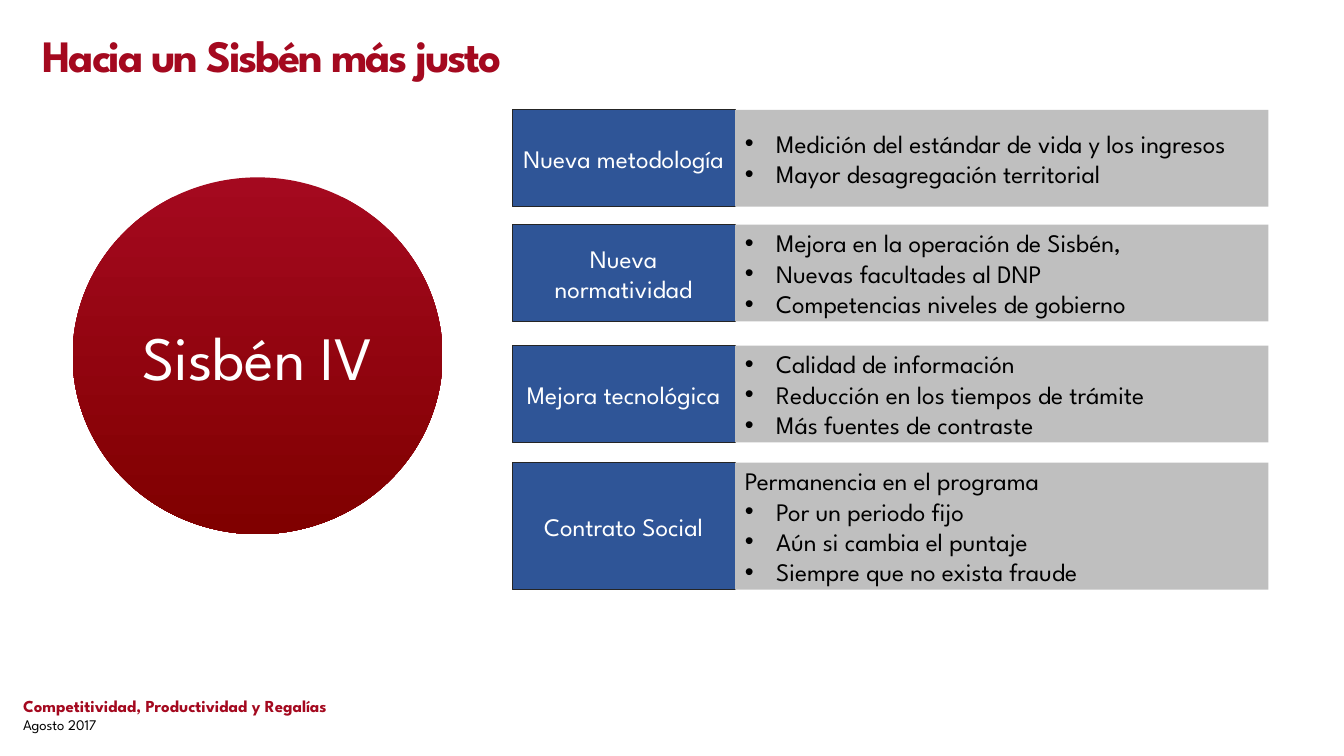
from lxml import etree
from pptx import Presentation
from pptx.dml.color import RGBColor
from pptx.enum.shapes import MSO_SHAPE
from pptx.enum.text import MSO_ANCHOR, MSO_AUTO_SIZE, PP_ALIGN
from pptx.oxml.ns import qn
from pptx.util import Inches, Pt

RECT, OVAL = MSO_SHAPE.RECTANGLE, MSO_SHAPE.OVAL
TOP, MIDDLE = MSO_ANCHOR.TOP, MSO_ANCHOR.MIDDLE
LEFT, CENTER = PP_ALIGN.LEFT, PP_ALIGN.CENTER
NO_FIT = MSO_AUTO_SIZE.NONE

FONT = "League Spartan"
COLORS = {"red": "A4091F", "maroon": "800000", "blue": "2F5597", "edge": "252525",
          "gray": "BFBFBF", "white": "FFFFFF", "black": "000000"}

LABEL_X, LABEL_W = 5.08, 2.21
DETAIL_X, DETAIL_W = LABEL_X + LABEL_W, 5.29
INDENT = Inches(0.31)

# label, top, height, lead line, bullets
ROWS = [
    ("Nueva metodología", 1.09, 0.96, [],
     ["Medición del estándar de vida y los ingresos", "Mayor desagregación territorial"]),
    ("Nueva normatividad", 2.23, 0.96, [],
     ["Mejora en la operación de Sisbén,", "Nuevas facultades al DNP",
      "Competencias niveles de gobierno"]),
    ("Mejora tecnológica", 3.43, 0.96, [],
     ["Calidad de información", "Reducción en los tiempos de trámite",
      "Más fuentes de contraste"]),
    ("Contrato Social", 4.59, 1.26, ["Permanencia en el programa"],
     ["Por un periodo fijo", "Aún si cambia el puntaje", "Siempre que no exista fraude"]),
]


def rgb(name):
    return RGBColor.from_string(COLORS[name])


def write(tf, lines, size, color, align=LEFT, bold=False, anchor=MIDDLE, bullets_from=None):
    """Fill a text frame; lines from index bullets_from on get a hanging bullet."""
    tf.auto_size, tf.word_wrap, tf.vertical_anchor = NO_FIT, True, anchor
    for i, line in enumerate(lines):
        p = tf.paragraphs[0] if i == 0 else tf.add_paragraph()
        p.alignment = align
        if bullets_from is not None and i >= bullets_from:
            pPr = p._p.get_or_add_pPr()
            pPr.set("marL", str(INDENT))
            pPr.set("indent", str(-INDENT))
            etree.SubElement(pPr, qn("a:buFont")).set("typeface", "Arial")
            etree.SubElement(pPr, qn("a:buChar")).set("char", "•")
        r = p.add_run()
        r.text = line
        for name, value in {"name": FONT, "size": Pt(size), "bold": bold}.items():
            setattr(r.font, name, value)
        r.font.color.rgb = rgb(color)


prs = Presentation()
prs.slide_width, prs.slide_height = Inches(13.33), Inches(7.5)
s = prs.slides.add_slide(prs.slide_layouts[5])

# Title
title = s.shapes.title
title.left, title.top, title.width, title.height = map(Inches, (0.32, 0.22, 12.7, 0.61))
write(title.text_frame, ["Hacia un Sisbén más justo"], 32, "red", bold=True, anchor=TOP)
title.text_frame.paragraphs[0].runs[0].font._element.set("spc", "-150")

# Footer
footer = s.shapes.add_textbox(*map(Inches, (0.13, 6.8, 9.15, 0.55)))
tf = footer.text_frame
for side in ("left", "top", "right", "bottom"):
    setattr(tf, f"margin_{side}", Inches(0.1))
write(tf, ["Competitividad, Productividad y Regalías", "Agosto 2017"], 12, "red",
      bold=True, anchor=TOP)
date_font = tf.paragraphs[1].runs[0].font
date_font.size, date_font.bold, date_font.color.rgb = Pt(10.5), False, rgb("black")

# Circle
circle = s.shapes.add_shape(OVAL, *map(Inches, (0.72, 1.76, 3.67, 3.54)))
circle.shadow.inherit = False
circle.line.fill.background()
circle.fill.gradient()
circle.fill.gradient_angle = 270
for stop, color, position in zip(circle.fill.gradient_stops, ("red", "maroon"), (0, 1)):
    stop.color.rgb, stop.position = rgb(color), position
write(circle.text_frame, ["Sisbén IV"], 44, "white", CENTER)

# Rows: blue label and gray detail
for label_text, top, height, lead, bullets in ROWS:
    label = s.shapes.add_shape(RECT, *map(Inches, (LABEL_X, top, LABEL_W, height)))
    detail = s.shapes.add_shape(RECT, *map(Inches, (DETAIL_X, top, DETAIL_W, height)))
    for sp, color in ((label, "blue"), (detail, "gray")):
        sp.shadow.inherit = False
        sp.fill.solid()
        sp.fill.fore_color.rgb = rgb(color)
    label.line.color.rgb, label.line.width = rgb("edge"), Pt(0.5)
    detail.line.fill.background()
    write(label.text_frame, [label_text], 18, "white", CENTER)
    write(detail.text_frame, lead + bullets, 18, "black", bullets_from=len(lead))

prs.save("out.pptx")
